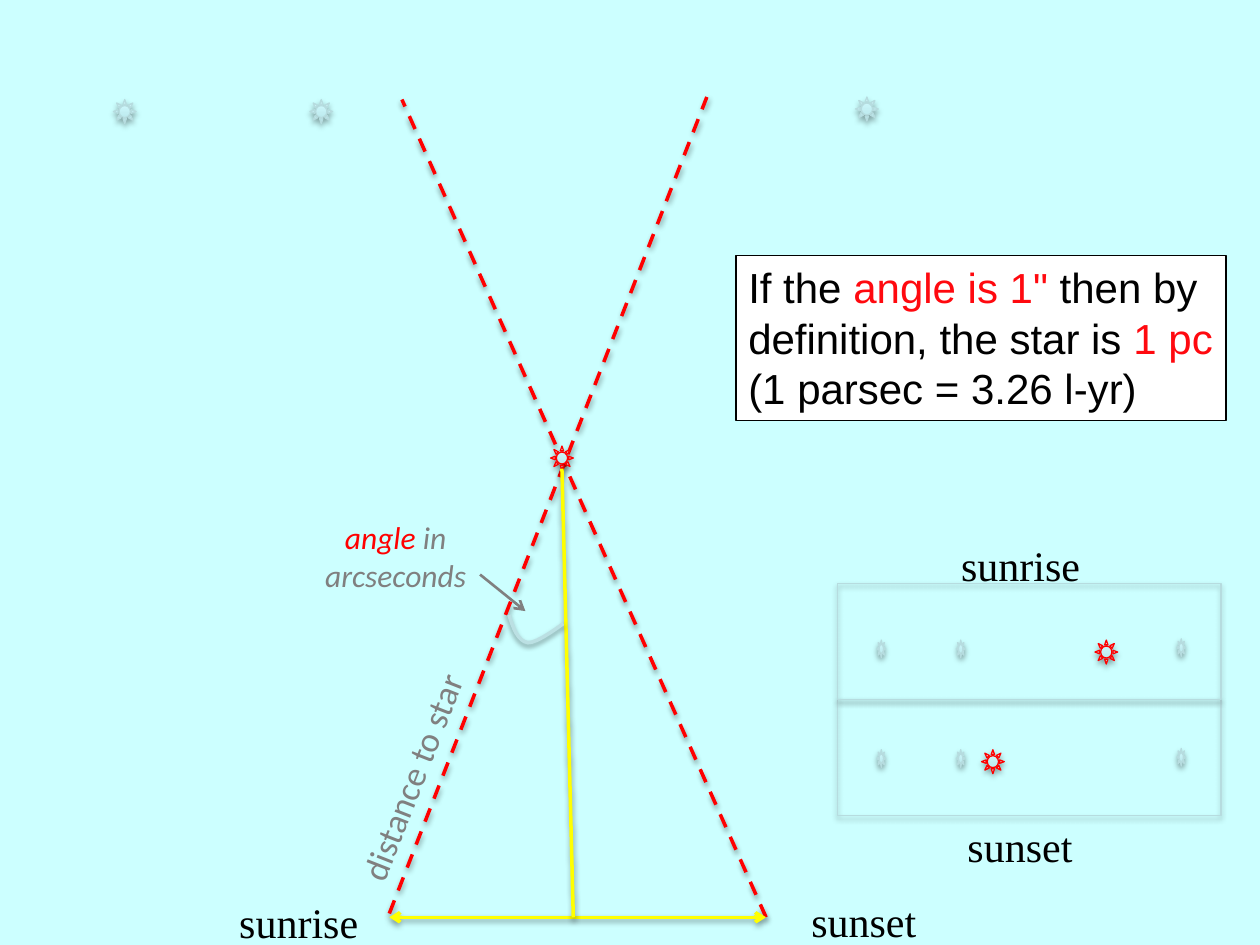
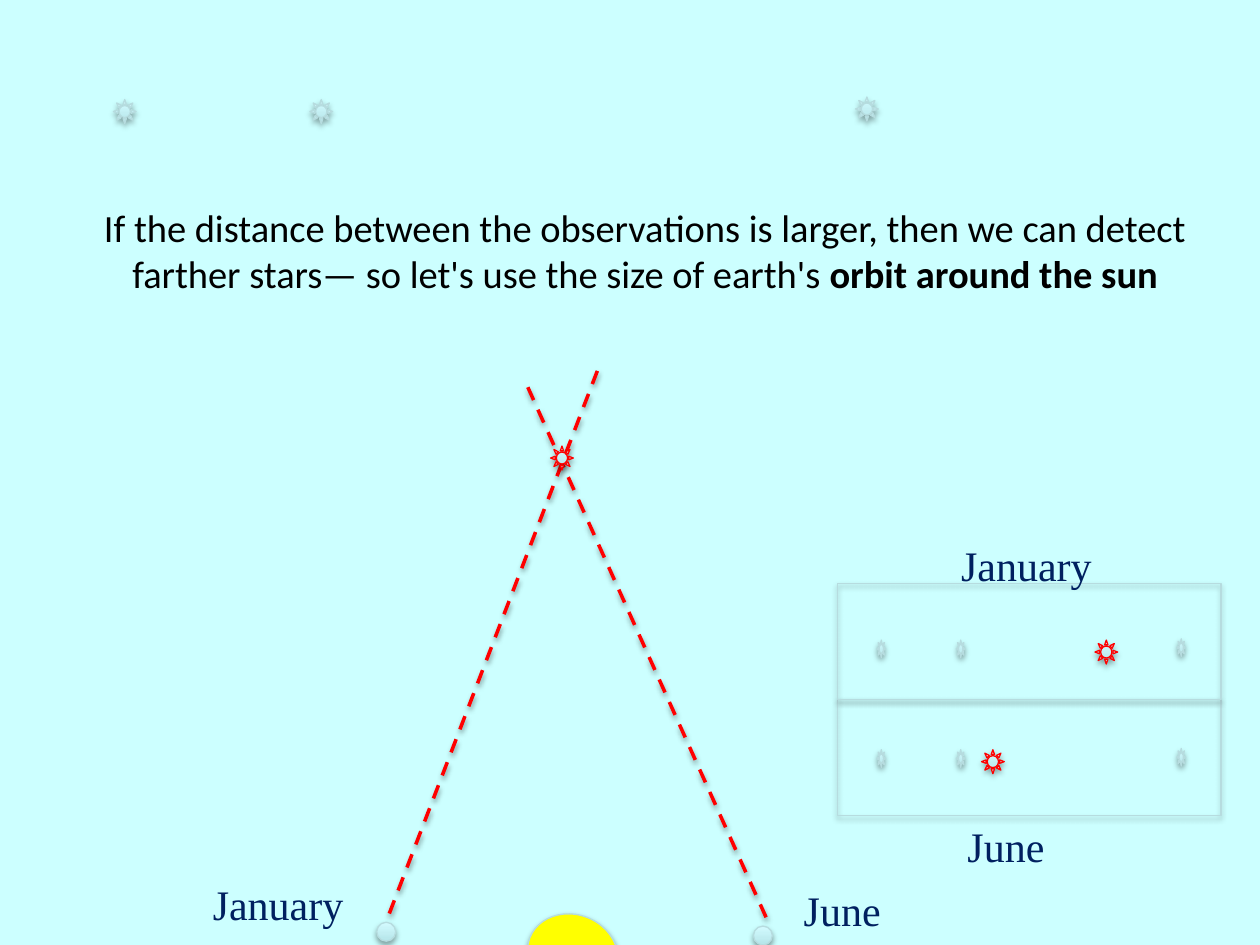
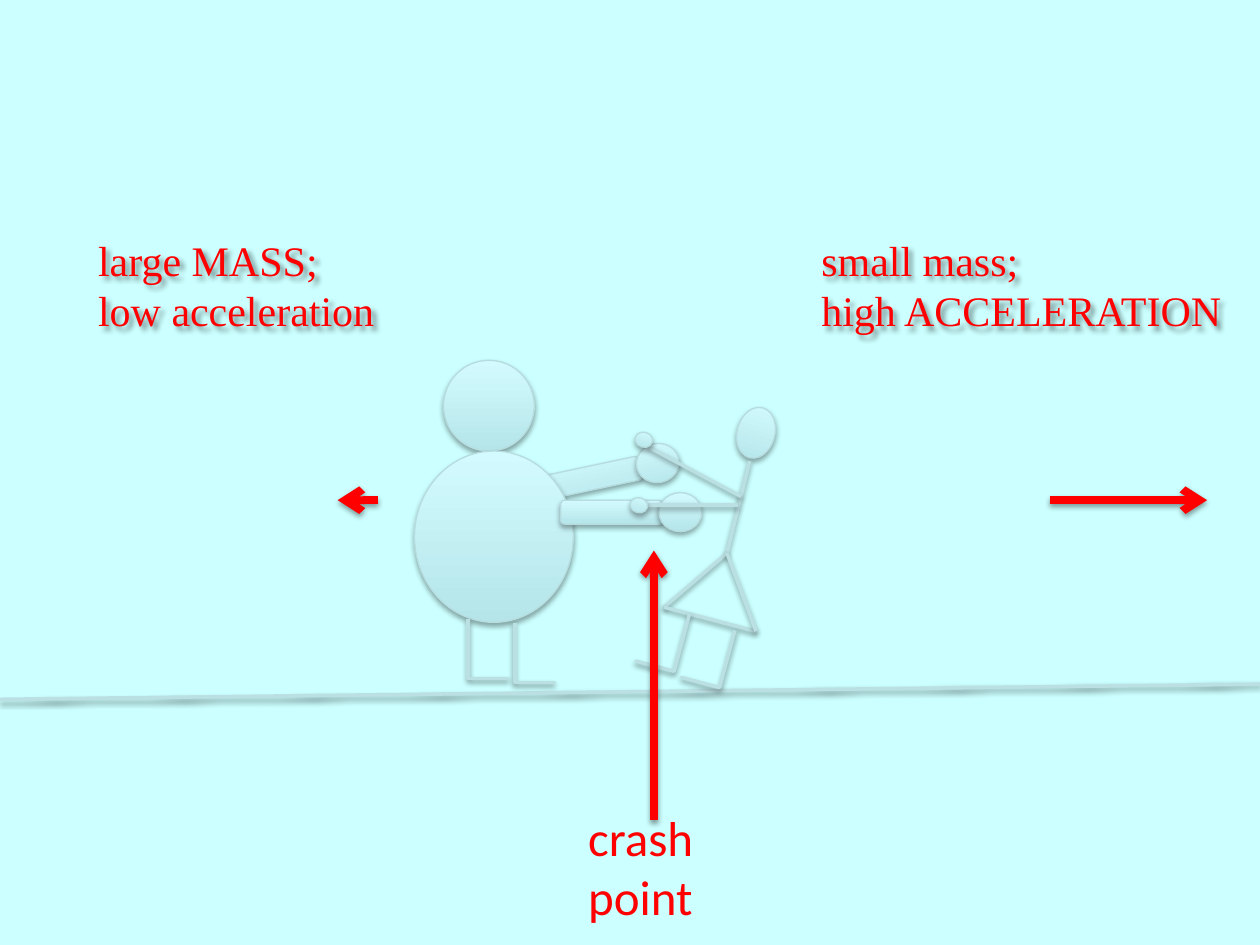
from lxml import etree
from pptx import Presentation
from pptx.dml.color import RGBColor
from pptx.enum.dml import MSO_LINE
from pptx.enum.shapes import MSO_CONNECTOR, MSO_SHAPE
from pptx.enum.text import MSO_AUTO_SIZE, PP_ALIGN
from pptx.oxml.ns import qn
from pptx.util import Pt

PX = 9144  # 100 px to the inch
SUN, RECT, OVAL = MSO_SHAPE.SUN, MSO_SHAPE.RECTANGLE, MSO_SHAPE.OVAL
ROUND, CHORD = MSO_SHAPE.ROUNDED_RECTANGLE, MSO_SHAPE.CHORD
LINE, BENT = MSO_CONNECTOR.STRAIGHT, MSO_CONNECTOR.ELBOW
DASH = MSO_LINE.DASH
FIT = MSO_AUTO_SIZE.SHAPE_TO_FIT_TEXT
LEFT, MID = PP_ALIGN.LEFT, PP_ALIGN.CENTER
SERIF, SANS, ARIAL = "Times New Roman", "Calibri", "Arial"

COLORS = {
    "sky": "CCFFFF", "dark": "B5E5E9", "light": "D3FBFF", "edge": "B6DCDF",
    "limb": "BBE0E3", "red": "FF0000", "mark": "FF090F", "yellow": "FFFF00",
    "grey": "808080", "navy": "002060", "black": "000000", "white": "FFFFFF",
}
# blur pt, distance pt, degrees, opacity %
SOFT = (3.1, 1.8, 90, 35)
LIMB = (3.1, 1.6, 90, 38)
GLOW = (3, 3, 45, 43)


def rgb(name):
    return RGBColor.from_string(COLORS[name])


def px(*nums):
    return [round(n * PX) for n in nums]


def shade(shape, look=None):
    """Give the shape its own shadow, or none at all."""
    fx = etree.SubElement(shape._element.spPr, qn("a:effectLst"))
    if look:
        blur, dist, turn, alpha = look
        cast = etree.SubElement(
            fx, qn("a:outerShdw"), blurRad=str(round(blur * 12700)),
            dist=str(round(dist * 12700)), dir=str(turn * 60000), rotWithShape="0")
        ink = etree.SubElement(cast, qn("a:srgbClr"), val=COLORS["black"])
        etree.SubElement(ink, qn("a:alpha"), val=str(alpha * 1000))


def stroke(line, color, width):
    line.color.rgb = rgb(color)
    line.width = Pt(width)


def form(host, kind, box, fill="blend", edge="edge", rot=0):
    shape = host.add_shape(kind, *px(*box))
    shape.rotation = rot
    if fill == "blend":
        shape.fill.gradient()
        shape.fill.gradient_angle = 90
        for stop, name in zip(shape.fill.gradient_stops, ("dark", "light")):
            stop.color.rgb = rgb(name)
            
    elif fill:
        shape.fill.solid()
        shape.fill.fore_color.rgb = rgb(fill)
    else:
        shape.fill.background()
    stroke(shape.line, edge, 0.75)
    shade(shape, SOFT)
    return shape


def rule(host, ends, color="limb", width=2, dash=None, tips=(), look=LIMB, kind=LINE):
    """Draw a line from the first end to the second; tips name its arrowheads."""
    line = host.add_connector(kind, *px(*ends))
    stroke(line.line, color, width)
    if dash:
        line.line.dash_style = dash
    for tip in tips:
        etree.SubElement(line.line._get_or_add_ln(), qn(f"a:{tip}"), type="arrow")
    shade(line, look)
    return line


def leg(host, ends, rot):
    """Draw a shin and foot as one bent line."""
    line = rule(host, ends, kind=BENT)
    line.rotation = rot
    geom = line._element.spPr.find(qn("a:prstGeom"))
    guides = geom.find(qn("a:avLst"))
    if guides is None:
        guides = etree.SubElement(geom, qn("a:avLst"))
    etree.SubElement(guides, qn("a:gd"), name="adj1", fmla="val 98100")


def text(host, box, paras, size, font, align=LEFT, rot=0, italic=None):
    """Each paragraph is a list of (words, color, bold) runs."""
    shape = host.add_textbox(*px(*box))
    shape.rotation = rot
    frame = shape.text_frame
    frame.word_wrap = True
    frame.auto_size = FIT
    for i, runs in enumerate(paras):
        para = frame.add_paragraph() if i else frame.paragraphs[0]
        para.alignment = align
        for words, color, *bold in runs:
            run = para.add_run()
            run.text = words
            run.font.size = Pt(size)
            run.font.name = font
            run.font.italic = italic
            run.font.bold = bold[0] if bold else None
            run.font.color.rgb = rgb(color)
    return shape


def label(host, box, words, color):
    return text(host, box, [[(w, color)] for w in words.split("\n")], 24, SERIF)


def curve(host, start, *parts):
    """Draw cubic arcs, each given by two handles and an end point."""
    points, last = [], start
    for one, two, end in parts:
        for step in range(1, 9):
            t = step / 8
            u = 1 - t
            points.append(px(*(
                u**3 * a + 3 * u * u * t * b + 3 * u * t * t * c + t**3 * d
                for a, b, c, d in zip(last, one, two, end))))
        last = end
    path = host.build_freeform(*px(*start), scale=1.0)
    path.add_line_segments(points, close=False)
    shape = path.convert_to_shape()
    shape.fill.background()
    stroke(shape.line, "limb", 2)
    shade(shape, LIMB)


def panel(host, top, near):
    """Draw one view of the sky, with the near star at the given left."""
    stars = host.add_group_shape().shapes
    row = top + (45 if top < 500 else 40)
    for x, y in ((696, row), (759, row), (934, row - 1)):
        form(stars, SUN, (x, y, 7, 14))
    form(host, RECT, (665, top, 304, 92), fill=None)
    form(host, SUN, (near, row, 18, 19), edge="red")


def sights(host, tops, early, late, ink):
    """Draw the far stars, both sight lines and the two views."""
    for x, y in ((90, 79), (246, 79), (679, 77)):
        form(host, SUN, (x, y, 18, 19))
    for foot, top in zip(((608, 728), (309, 725)), tops):
        rule(host, (*foot, *top), "red", dash=DASH)
    form(host, SUN, (437, 354, 18, 19), edge="red")
    panel(host, 555, 779)
    panel(host, 463, 869)
    label(host, (753, 423, 134, 50), early, ink)
    label(host, (758, 646, 119, 50), late, ink)


def angle(host):
    sights(host, ((319, 79), (561, 77)), "sunrise", "sunset", "black")
    label(host, (180, 707, 118, 50), "sunrise", "black")
    label(host, (634, 706, 119, 40), "sunset", "black")
    rule(host, (309, 728, 608, 728), "yellow", tips=("headEnd", "tailEnd"))
    rule(host, (446, 372, 455, 728), "yellow")
    curve(host, (404, 488), ((407, 498), (411, 509), (419, 510)),
          ((426, 511), (447, 495), (447, 495)))
    text(host, (243, 406, 142, 71),
         [[("angle ", "red"), ("in arcseconds", "grey")]], 18, SANS, MID, italic=True)
    text(host, (226, 588, 207, 44), [[("distance to star", "grey")]], 20, SANS, rot=291.4)
    note = text(host, (584, 203, 389, 131), [[
        ("If the ", "black"), ('angle is 1" ', "mark"),
        ("then by definition, the star is ", "black"), ("1 pc ", "mark"),
        ("(1 parsec = 3.26 l-yr)", "black")]], 24, ARIAL)
    note.fill.solid()
    note.fill.fore_color.rgb = rgb("white")
    stroke(note.line, "black", 0.75)
    rule(host, (381, 456, 417, 485), "grey", 1.5, tips=("tailEnd",), look=None)


def orbit(host):
    form(host, CHORD, (423, 721, 63, 73), fill="yellow", rot=111)
    sights(host, ((417, 303), (475, 292)), "January", "June", "navy")
    label(host, (159, 692, 132, 50), "January", "navy")
    label(host, (628, 697, 119, 91), "June", "navy")
    text(host, (51, 157, 922, 84), [[
        ("If the distance between the observations is larger, then we can detect "
         "farther stars— so let's use the size of earth's ", "black"),
        ("orbit around the sun", "black", True)]], 22, SANS, MID)
    for x, y in ((299, 732), (598, 735)):
        form(host, OVAL, (x, y, 15, 15))


def crash(host):
    rule(host, (0, 555, 1000, 543))

    big = host.add_group_shape().shapes
    form(big, ROUND, (428, 370, 81, 19), rot=348)
    form(big, OVAL, (505, 352, 34, 31), rot=348)
    form(big, OVAL, (352, 286, 72, 72))
    form(big, OVAL, (329, 358, 126, 136))
    for x, y in ((363, 500), (400, 503)):
        leg(big, (x + 48, y, x, y + 31), 270)
    form(big, ROUND, (445, 397, 81, 19))
    form(big, OVAL, (523, 391, 34, 31))

    small = host.add_group_shape().shapes
    form(small, OVAL, (585, 323, 30, 41), rot=15)
    hip, hem, tip = (577, 439), (527, 482), (600, 501)
    for start, end in (((595, 366), hip), (hip, hem), (hem, tip), (hip, tip)):
        rule(small, (*start, *end))
    for x, y in ((502, 491), (538, 504)):
        leg(small, (x, y, x + 48, y + 31), 105)
    for arm in ((586, 401, 513, 401), (588, 394, 515, 355)):
        rule(small, arm)
    for x, y in ((504, 343), (500, 395)):
        form(small, OVAL, (x, y, 14, 12), rot=15)

    for ends in ((833, 397, 958, 397), (519, 651, 519, 437), (300, 397, 268, 397)):
        rule(host, ends, "red", 4.5, tips=("tailEnd",))
    for box, words in (((68, 181, 261, 91), "large MASS;\nlow acceleration"),
                       ((642, 181, 347, 91), "small mass;\nhigh ACCELERATION")):
        shade(label(host, box, words, "red"), GLOW)
    text(host, (457, 636, 147, 104), [[("crash", "red")], [("point", "red")]], 28, SANS)


def main():
    prs = Presentation()
    prs.slide_width, prs.slide_height = px(1000, 750)
    back = prs.slide_master.background.fill
    back.solid()
    back.fore_color.rgb = rgb("sky")
    for draw in (angle, orbit, crash):
        draw(prs.slides.add_slide(prs.slide_layouts[6]).shapes)
    prs.save("out.pptx")


if __name__ == "__main__":
    main()
